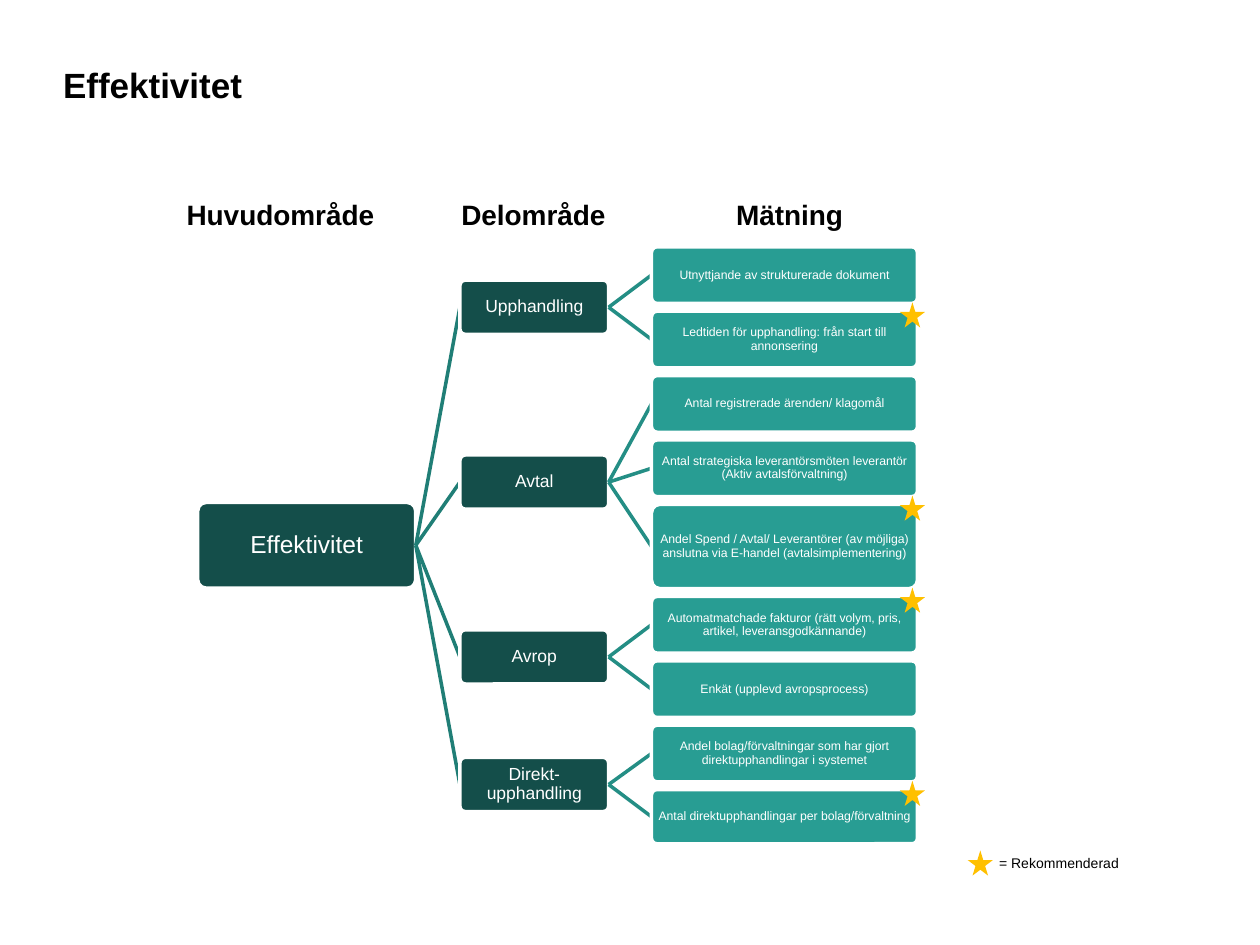
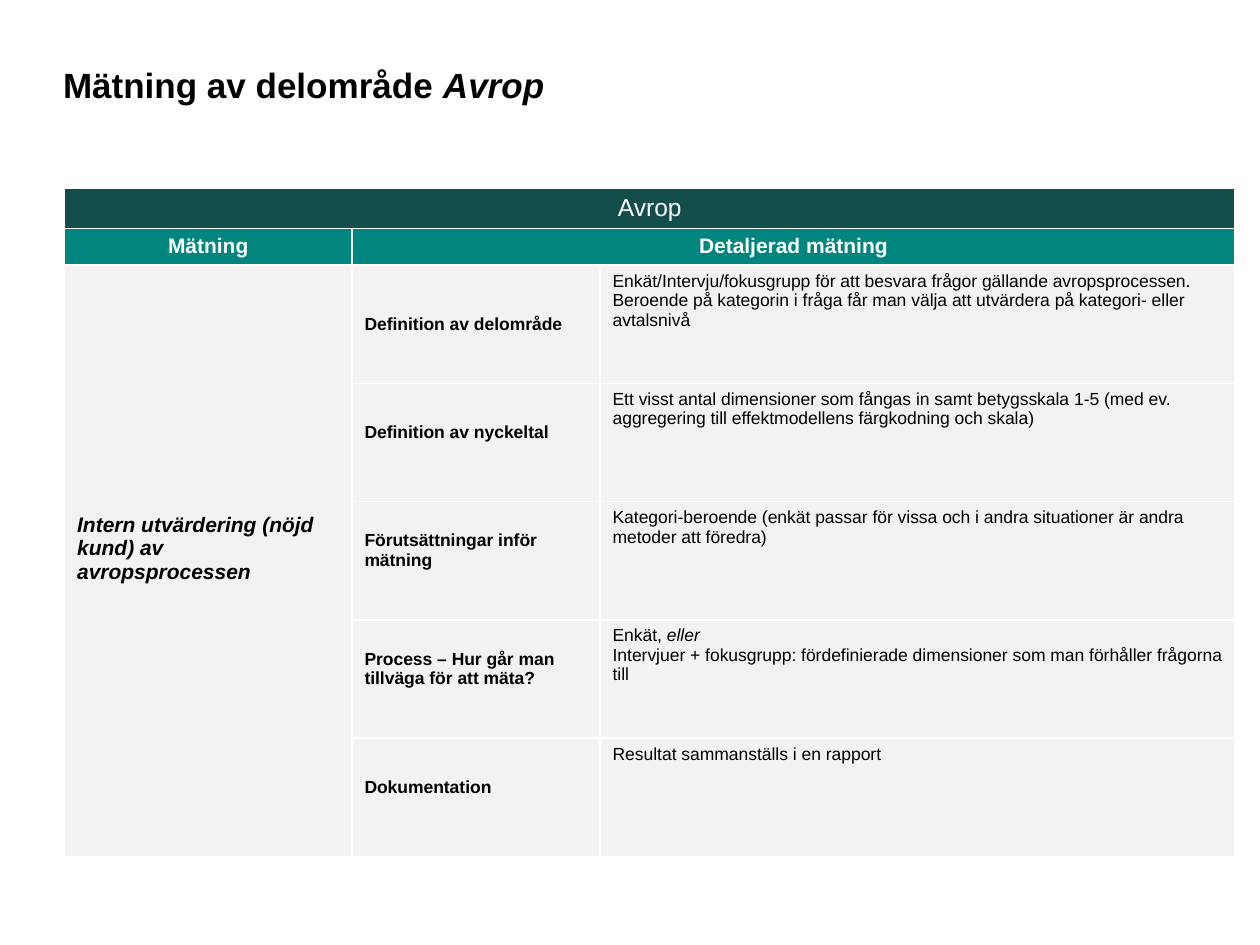
from dataclasses import dataclass

from lxml import etree
from pptx import Presentation
from pptx.dml.color import RGBColor
from pptx.enum.shapes import MSO_CONNECTOR, MSO_SHAPE
from pptx.enum.text import MSO_ANCHOR, MSO_AUTO_SIZE, PP_ALIGN
from pptx.oxml.ns import qn
from pptx.util import Pt

ROUNDED = MSO_SHAPE.ROUNDED_RECTANGLE
STAR = MSO_SHAPE.STAR_5_POINT
STRAIGHT = MSO_CONNECTOR.STRAIGHT
LEFT, CENTER = PP_ALIGN.LEFT, PP_ALIGN.CENTER
TOP, MIDDLE = MSO_ANCHOR.TOP, MSO_ANCHOR.MIDDLE
NO_AUTOFIT = MSO_AUTO_SIZE.NONE
LEFT_SIDE, RIGHT_SIDE = 1, 3
TITLE_ONLY = 5


@dataclass(frozen=True)
class Theme:
    font: str = "Arial"
    ink: str = "000000"
    white: str = "FFFFFF"
    dark: str = "144E4A"
    header: str = "00867F"
    measure: str = "289D93"
    area_line: str = "207E76"
    measure_line: str = "248E85"
    star: str = "FFC000"
    cell: str = "F2F2F2"
    title_size: int = 20
    heading_size: int = 16
    main_size: int = 14
    strong_size: int = 12
    body_size: int = 10
    legend_size: int = 8
    measure_size: int = 7


THEME = Theme()

HEADINGS = ["Huvudområde", "Delområde", "Mätning"]
MEASURE_HEIGHT = 32.4
MEASURE_GAP = 4.4
TREE_TOP = 141
AREAS = [
    ("Upphandling", [
        ("Utnyttjande av strukturerade dokument", MEASURE_HEIGHT, False),
        ("Ledtiden för upphandling: från start till annonsering", MEASURE_HEIGHT, True),
    ]),
    ("Avtal", [
        ("Antal registrerade ärenden/ klagomål", MEASURE_HEIGHT, False),
        ("Antal strategiska leverantörsmöten leverantör (Aktiv avtalsförvaltning)",
         MEASURE_HEIGHT, False),
        ("Andel Spend / Avtal/ Leverantörer (av möjliga) anslutna via E-handel "
         "(avtalsimplementering)", 48.2, True),
    ]),
    ("Avrop", [
        ("Automatmatchade fakturor (rätt volym, pris, artikel, leveransgodkännande)",
         MEASURE_HEIGHT, True),
        ("Enkät (upplevd avropsprocess)", MEASURE_HEIGHT, False),
    ]),
    ("Direkt-upphandling", [
        ("Andel bolag/förvaltningar som har gjort direktupphandlingar i systemet",
         MEASURE_HEIGHT, False),
        ("Antal direktupphandlingar per bolag/förvaltning", 31, True),
    ]),
]

DETAILS = [
    ("Definition av delområde", 3.6, [
        ("Enkät/Intervju/fokusgrupp för att besvara frågor gällande avropsprocessen. "
         "Beroende på kategorin i fråga får man välja att utvärdera på kategori- "
         "eller avtalsnivå", "")]),
    ("Definition av nyckeltal", 15, [
        ("Ett visst antal dimensioner som fångas in samt betygsskala 1-5 (med ev. "
         "aggregering till effektmodellens färgkodning och skala)", "")]),
    ("Förutsättningar inför mätning", 15, [
        ("Kategori-beroende (enkät passar för vissa och i andra situationer är andra "
         "metoder att föredra)", "")]),
    ("Process – Hur går man tillväga för att mäta?", 15, [
        ("Enkät, ", "eller"),
        ("Intervjuer + fokusgrupp: fördefinierade dimensioner som man förhåller "
         "frågorna till", "")]),
    ("Dokumentation", 15, [("Resultat sammanställs i en rapport", "")]),
]


def rgb(color):
    return RGBColor.from_string(color)


def write(paragraph, text, size, color=THEME.ink, bold=False, italic=False,
          align=LEFT, italic_tail=""):
    paragraph.text = text
    paragraph.alignment = align
    if italic_tail:
        paragraph.add_run().text = italic_tail
    for run in paragraph.runs:
        run.font.name = THEME.font
        run.font.size = Pt(size)
        run.font.color.rgb = rgb(color)
        run.font.bold = bold
        run.font.italic = italic
    if italic_tail:
        paragraph.runs[-1].font.italic = True


def set_insets(frame, inset):
    frame.margin_left = frame.margin_right = Pt(inset)
    frame.margin_top = frame.margin_bottom = Pt(inset)


def add_titled_slide(deck, text, italic_tail=""):
    slide = deck.slides.add_slide(deck.slide_layouts[TITLE_ONLY])
    title = slide.shapes.title
    title.left, title.top, title.width, title.height = Pt(36), Pt(36), Pt(648), Pt(65.5)
    frame = title.text_frame
    set_insets(frame, 0)
    frame.auto_size = NO_AUTOFIT
    frame.vertical_anchor = TOP
    write(frame.paragraphs[0], text, THEME.title_size, bold=True, italic_tail=italic_tail)
    return slide


def add_filled(slide, preset, left, top, width, height, color):
    shape = slide.shapes.add_shape(preset, Pt(left), Pt(top), Pt(width), Pt(height))
    shape.shadow.inherit = False
    shape.fill.solid()
    shape.fill.fore_color.rgb = rgb(color)
    shape.line.fill.background()
    return shape


def add_node(slide, text, left, top, width, height, color, size, inset):
    node = add_filled(slide, ROUNDED, left, top, width, height, color)
    node.adjustments[0] = 0.1
    node.line.color.rgb = rgb(THEME.white)
    node.line.width = Pt(2)
    frame = node.text_frame
    frame.word_wrap = True
    frame.vertical_anchor = MIDDLE
    set_insets(frame, inset)
    write(frame.paragraphs[0], text, size, THEME.white, align=CENTER)
    frame.paragraphs[0].line_spacing = 0.9
    return node


def link(slide, parent, child, color):
    branch = slide.shapes.add_connector(STRAIGHT, 0, 0, 0, 0)
    branch.begin_connect(parent, RIGHT_SIDE)
    branch.end_connect(child, LEFT_SIDE)
    branch.line.color.rgb = rgb(color)
    branch.line.width = Pt(2)
    etree.SubElement(branch._element.spPr, qn("a:effectLst"))
    child._element.addprevious(branch._element)


def add_star(slide, left, top):
    add_filled(slide, STAR, left, top, 14.4, 14.4, THEME.star)


def add_plain_table(slide, left, top, widths, heights):
    frame = slide.shapes.add_table(len(heights), len(widths), Pt(left), Pt(top),
                                   Pt(sum(widths)), Pt(sum(heights)))
    table = frame.table
    table.first_row = table.horz_banding = False
    for column, width in zip(table.columns, widths):
        column.width = Pt(width)
    for row, height in zip(table.rows, heights):
        row.height = Pt(height)
    return table


def border_cell(cell, color):
    properties = cell._tc.get_or_add_tcPr()
    for position, side in enumerate(("a:lnL", "a:lnR", "a:lnT", "a:lnB")):
        edge = etree.Element(qn(side), w=str(Pt(1)))
        fill = etree.SubElement(edge, qn("a:solidFill"))
        etree.SubElement(fill, qn("a:srgbClr"), val=color)
        properties.insert(position, edge)


def fill_cell(cell, color):
    cell.fill.solid()
    cell.fill.fore_color.rgb = rgb(color)


def add_headings(slide):
    table = add_plain_table(slide, 99.4, 110.9, [157] * len(HEADINGS), [29.5])
    for cell, heading in zip(table.rows[0].cells, HEADINGS):
        cell.fill.background()
        write(cell.text_frame.paragraphs[0], heading, THEME.heading_size, bold=True)


def add_tree(slide):
    measures = [measure for _, group in AREAS for measure in group]
    tree_height = sum(height + MEASURE_GAP for _, height, _ in measures) - MEASURE_GAP
    main_height, area_height = 49, 31
    root = add_node(slide, "Effektivitet", 113, TREE_TOP + (tree_height - main_height) / 2,
                    124.6, main_height, THEME.dark, THEME.main_size, 1)
    top = TREE_TOP
    star_tops = []
    for area_name, group in AREAS:
        group_height = sum(height + MEASURE_GAP for _, height, _ in group) - MEASURE_GAP
        area = add_node(slide, area_name, 262.8, top + (group_height - area_height) / 2,
                        85, area_height, THEME.dark, THEME.body_size, 1)
        link(slide, root, area, THEME.area_line)
        for text, height, recommended in group:
            measure = add_node(slide, text, 372.3, top, 152, height,
                               THEME.measure, THEME.measure_size, 0)
            link(slide, area, measure, THEME.measure_line)
            if recommended:
                star_tops.append(top - 5)
            top += height + MEASURE_GAP
    for star_top in star_tops:
        add_star(slide, 514.2, star_top)


def add_legend(slide):
    add_star(slide, 553, 486)
    legend = slide.shapes.add_textbox(Pt(563.8), Pt(485.3), Pt(115.2), Pt(15.1))
    frame = legend.text_frame
    frame.word_wrap = True
    frame.vertical_anchor = MIDDLE
    write(frame.paragraphs[0], "= Rekommenderad", THEME.legend_size)


def add_detail_table(slide):
    heights = [23, 21] + [67.6] * len(DETAILS)
    table = add_plain_table(slide, 36.9, 107.5, [164.2, 141.8, 362.9], heights)
    row_colors = [THEME.dark, THEME.header] + [THEME.cell] * len(DETAILS)
    for row, color in zip(table.rows, row_colors):
        for cell in row.cells:
            fill_cell(cell, color)
            border_cell(cell, THEME.white)
    table.cell(0, 0).merge(table.cell(0, 2))
    table.cell(1, 1).merge(table.cell(1, 2))
    table.cell(2, 0).merge(table.cell(len(heights) - 1, 0))

    write(table.cell(0, 0).text_frame.paragraphs[0], "Avrop", THEME.main_size,
          THEME.white, align=CENTER)
    for column, heading in enumerate(["Mätning", "Detaljerad mätning"]):
        write(table.cell(1, column).text_frame.paragraphs[0], heading,
              THEME.strong_size, THEME.white, bold=True, align=CENTER)

    subject = table.cell(2, 0)
    subject.vertical_anchor = MIDDLE
    subject.margin_bottom = Pt(17.4)
    write(subject.text_frame.paragraphs[0],
          "Intern utvärdering (nöjd kund) av avropsprocessen",
          THEME.strong_size, bold=True, italic=True)

    for row, (label, bottom_margin, statements) in enumerate(DETAILS, start=2):
        aspect = table.cell(row, 1)
        aspect.vertical_anchor = MIDDLE
        aspect.margin_bottom = Pt(bottom_margin)
        write(aspect.text_frame.paragraphs[0], label, THEME.body_size, bold=True)
        frame = table.cell(row, 2).text_frame
        for index, (text, italic_tail) in enumerate(statements):
            paragraph = frame.add_paragraph() if index else frame.paragraphs[0]
            write(paragraph, text, THEME.body_size, italic_tail=italic_tail)


def main():
    deck = Presentation()
    deck.slide_width, deck.slide_height = Pt(720), Pt(540)

    overview = add_titled_slide(deck, "Effektivitet")
    add_headings(overview)
    add_tree(overview)
    add_legend(overview)

    detail = add_titled_slide(deck, "Mätning av delområde ", "Avrop")
    add_detail_table(detail)

    deck.save("out.pptx")


if __name__ == "__main__":
    main()
